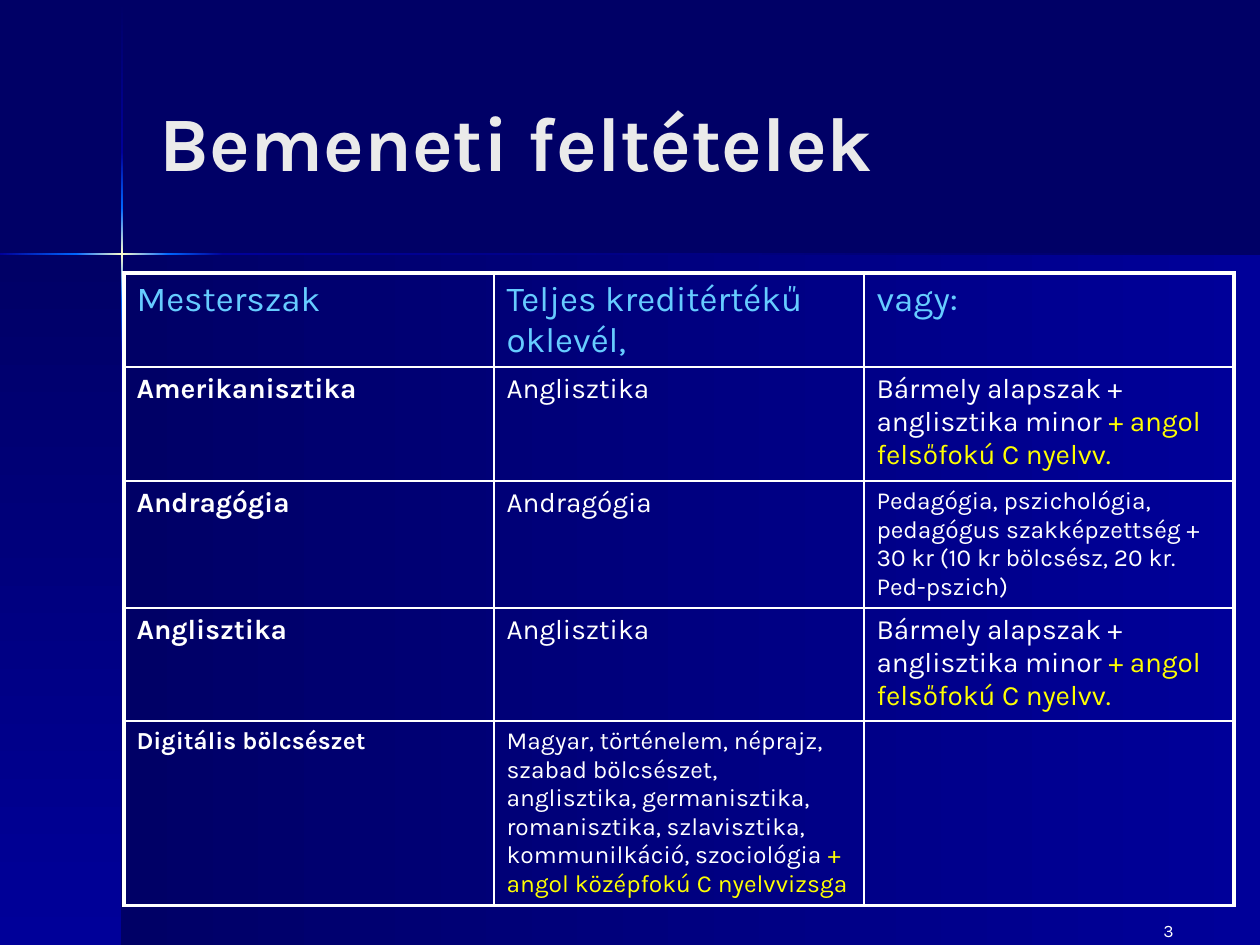
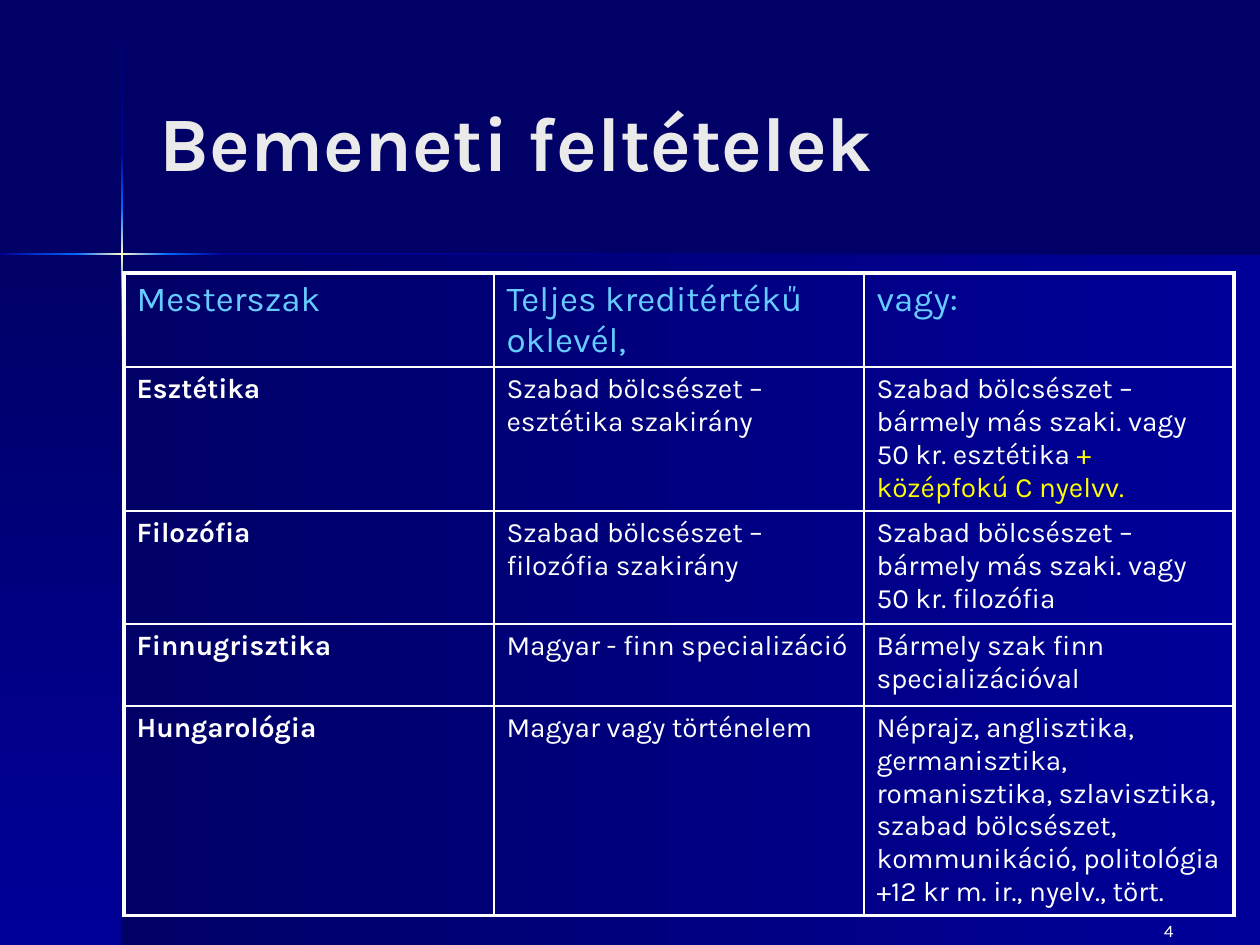
from itertools import pairwise

from lxml import etree
from pptx import Presentation
from pptx.dml.color import RGBColor
from pptx.enum.shapes import MSO_SHAPE
from pptx.enum.text import MSO_ANCHOR, PP_ALIGN
from pptx.oxml.ns import qn
from pptx.util import Emu, Pt

RECTANGLE = MSO_SHAPE.RECTANGLE
MIDDLE = MSO_ANCHOR.MIDDLE
LEFT, RIGHT = PP_ALIGN.LEFT, PP_ALIGN.RIGHT

NAVY = RGBColor(0x00, 0x00, 0x66)
BLUE = RGBColor(0x00, 0x00, 0x99)
BRIGHT = RGBColor(0x00, 0x66, 0xFF)
GLOW = RGBColor(0xFF, 0xFF, 0xCC)
SKY = RGBColor(0x66, 0xCC, 0xFF)
YELLOW = RGBColor(0xFF, 0xFF, 0x00)
WHITE = RGBColor(0xFF, 0xFF, 0xFF)
PALE = RGBColor(0xEA, 0xEA, 0xEA)
FONT = "Karla"

TITLE = "Bemeneti feltételek"
HEADINGS = ["Mesterszak", "Teljes kreditértékű oklevél,", "vagy:"]
MINOR = ("Bármely alapszak + anglisztika minor ", "+ angol felsőfokú C nyelvv.")

# Each cell: (plain text, highlighted text); "sizes" holds exceptions to BODY_SIZE
PAGES = [
    {
        "number": "3",
        "heights": [94, 114, 127, 113, 184],
        "rows": [
            [("Amerikanisztika", ""), ("Anglisztika", ""), MINOR],
            [("Andragógia", ""), ("Andragógia", ""),
             ("Pedagógia, pszichológia, pedagógus szakképzettség + 30 kr "
              "(10 kr bölcsész, 20 kr. Ped-pszich)", "")],
            [("Anglisztika", ""), ("Anglisztika", ""), MINOR],
            [("Digitális bölcsészet", ""),
             ("Magyar, történelem, néprajz, szabad bölcsészet, anglisztika, "
              "germanisztika, romanisztika, szlavisztika, kommunilkáció, "
              "szociológia ", "+ angol középfokú C nyelvvizsga"),
             ("", "")],
        ],
        "sizes": {(2, 2): 14, (4, 0): 14, (4, 1): 14},
    },
    {
        "number": "4",
        "heights": [94, 144, 113, 82, 210],
        "rows": [
            [("Esztétika", ""), ("Szabad bölcsészet – esztétika szakirány", ""),
             ("Szabad bölcsészet – bármely más szaki. vagy 50 kr. esztétika ",
              "+ középfokú C nyelvv.")],
            [("Filozófia", ""), ("Szabad bölcsészet – filozófia szakirány", ""),
             ("Szabad bölcsészet – bármely más szaki. vagy 50 kr. filozófia", "")],
            [("Finnugrisztika", ""), ("Magyar - finn specializáció", ""),
             ("Bármely szak finn specializációval", "")],
            [("Hungarológia", ""), ("Magyar vagy történelem", ""),
             ("Néprajz, anglisztika, germanisztika, romanisztika, szlavisztika, "
              "szabad bölcsészet, kommunikáció, politológia +12 kr m. ir., "
              "nyelv., tört.", "")],
        ],
        "sizes": {},
    },
]

# Layout in px, 126 to the inch
PX = 914400 // 126
WIDTH, HEIGHT = 1260, 945
TITLE_BOX = (147, 42, 1040, 198)
NUMBER_BOX = (924, 914, 262, 30)
TABLE_LEFT, TABLE_TOP, COLUMN_WIDTH = 124, 273, 370
CELL_BOTTOM_MARGIN = 2
CROSS_X, CROSS_Y, BEAM = 121, 253, 2
BEAM_YS = [1, 152, 208, 300, 355, HEIGHT]
BEAM_XS = [0, 76, 168, 223, WIDTH]
BEAM_STOPS = [(NAVY, BLUE), (BLUE, BRIGHT), (BRIGHT, GLOW, BRIGHT),
              (BRIGHT, BLUE), (BLUE, NAVY)]
HEADING_SIZE, BODY_SIZE = 20, 16
OUTER, INNER = 2.25, 1


def px(*lengths):
    return [Emu(length * PX) for length in lengths]


def write(frame, text, highlight="", size=BODY_SIZE, color=WHITE, bold=False,
          align=LEFT, spaced=False):
    paragraph = frame.paragraphs[0]
    paragraph.alignment = align
    if spaced:
        before = etree.SubElement(paragraph._p.get_or_add_pPr(), qn("a:spcBef"))
        etree.SubElement(before, qn("a:spcPct"), val="20000")
    for words, tint in ((text, color), (highlight, YELLOW)):
        if words:
            run = paragraph.add_run()
            run.text = words
            run.font.name = FONT
            run.font.size = Pt(size)
            run.font.bold = bold
            run.font.color.rgb = tint


def add_gradient(slide, box, stops, downward):
    band = slide.shapes.add_shape(RECTANGLE, *px(*box))
    band.shadow.inherit = False
    band.line.fill.background()
    band.fill.gradient()
    band.fill.gradient_angle = 270 if downward else 0
    stop_list = band._element.spPr.find(qn("a:gradFill")).find(qn("a:gsLst"))
    for stop in list(stop_list):
        stop_list.remove(stop)
    for i, color in enumerate(stops):
        stop = etree.SubElement(stop_list, qn("a:gs"),
                                pos=str(100000 * i // (len(stops) - 1)))
        etree.SubElement(stop, qn("a:srgbClr"), val=str(color))
    return band


def draw_backdrop(slide):
    below = HEIGHT - CROSS_Y
    bands = [
        add_gradient(slide, (CROSS_X + 1, CROSS_Y + 1, WIDTH - CROSS_X - 1, below - 1),
                     (NAVY, BLUE), False),
        add_gradient(slide, (0, CROSS_Y + 1, CROSS_X + 1, below - 1),
                     (NAVY, BLUE), True),
    ]
    for (top, bottom), stops in zip(pairwise(BEAM_YS), BEAM_STOPS):
        bands.append(add_gradient(slide, (CROSS_X, top, BEAM, bottom - top), stops, True))
    for (left, right), stops in zip(pairwise(BEAM_XS), BEAM_STOPS[1:]):
        bands.append(add_gradient(slide, (left, CROSS_Y, right - left, BEAM), stops, False))
    return bands


def prepare_layout(layout):
    """Give the layout its background and title place, without footers."""
    layout.background.fill.solid()
    layout.background.fill.fore_color.rgb = NAVY
    for holder in list(layout.placeholders):
        if holder.placeholder_format.idx:
            holder.element.getparent().remove(holder.element)
        else:
            holder.left, holder.top, holder.width, holder.height = px(*TITLE_BOX)


def share_backdrop(slide, layout):
    """Move the bands from the slide to the back of its layout."""
    for position, band in enumerate(draw_backdrop(slide), start=2):
        layout.shapes.element.insert(position, band.element)


def set_borders(cell, **widths):
    properties = cell._tc.get_or_add_tcPr()
    for position, side in enumerate(("L", "R", "T", "B")):
        border = etree.Element(qn(f"a:ln{side}"), w=str(Pt(widths[side])))
        fill = etree.SubElement(border, qn("a:solidFill"))
        etree.SubElement(fill, qn("a:srgbClr"), val=str(WHITE))
        properties.insert(position, border)


def add_requirements(slide, page):
    rows = [[(heading, "") for heading in HEADINGS]] + page["rows"]
    last_row, last_column = len(rows) - 1, len(HEADINGS) - 1
    table = slide.shapes.add_table(
        len(rows), len(HEADINGS),
        *px(TABLE_LEFT, TABLE_TOP, COLUMN_WIDTH * len(HEADINGS), sum(page["heights"])),
    ).table
    table.first_row = table.horz_banding = False
    for column in table.columns:
        column.width = Emu(COLUMN_WIDTH * PX)
    for r, (height, entries) in enumerate(zip(page["heights"], rows)):
        table.rows[r].height = Emu(height * PX)
        for c, (text, highlight) in enumerate(entries):
            cell = table.cell(r, c)
            cell.fill.background()
            cell.margin_bottom = Emu(CELL_BOTTOM_MARGIN * PX)
            set_borders(cell, L=INNER if c else OUTER, T=INNER if r else OUTER,
                        R=OUTER if c == last_column else INNER,
                        B=OUTER if r == last_row else INNER)
            size = page["sizes"].get((r, c), BODY_SIZE) if r else HEADING_SIZE
            write(cell.text_frame, text, highlight, size=size,
                  color=WHITE if r else SKY, bold=r > 0 and c == 0, spaced=True)


def main():
    deck = Presentation()
    deck.slide_width, deck.slide_height = px(WIDTH, HEIGHT)
    layout = deck.slide_layouts[5]
    prepare_layout(layout)
    for i, page in enumerate(PAGES):
        slide = deck.slides.add_slide(layout)
        if i == 0:
            share_backdrop(slide, layout)
        title = slide.shapes.title.text_frame
        title.vertical_anchor = MIDDLE
        write(title, TITLE, size=44, color=PALE, bold=True)
        number = slide.shapes.add_textbox(*px(*NUMBER_BOX)).text_frame
        number.word_wrap = True
        write(number, page["number"], size=10, align=RIGHT)
        add_requirements(slide, page)
    deck.save("out.pptx")


if __name__ == "__main__":
    main()
